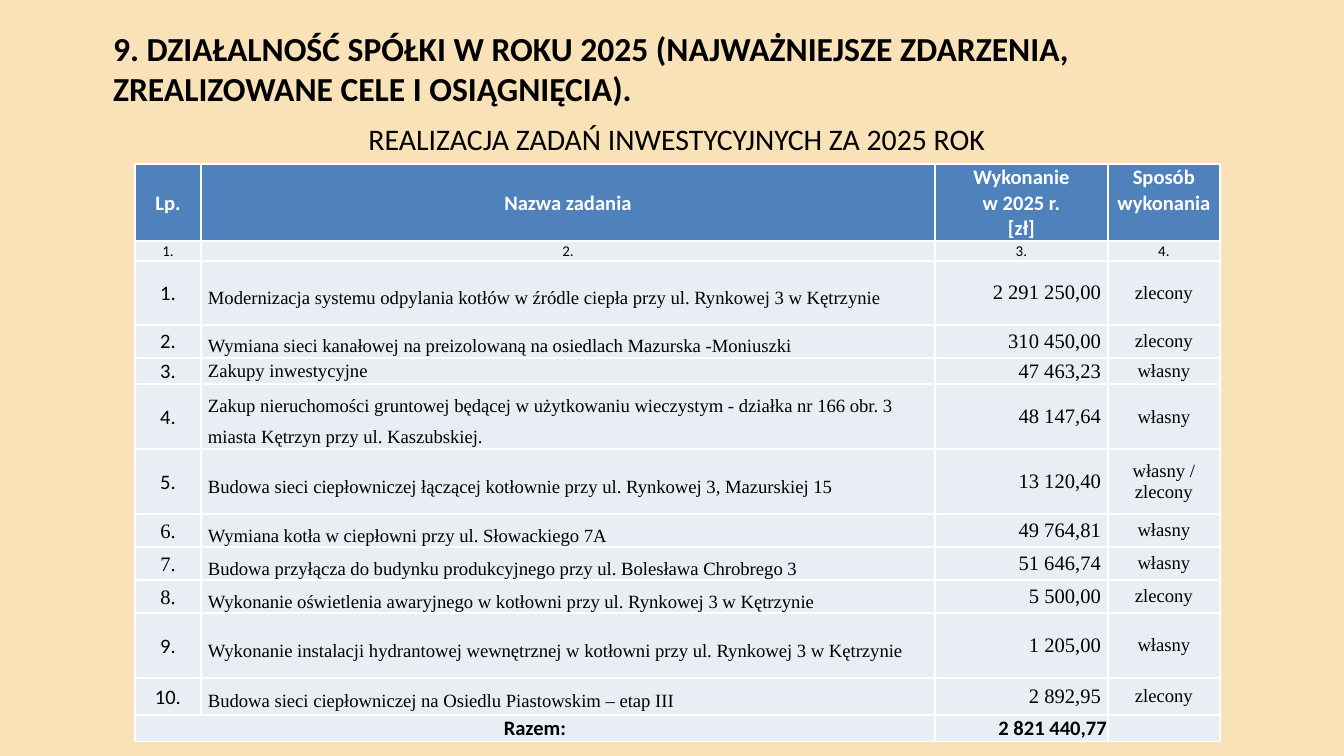
"""Build a slide with a table of investment tasks completed in 2025."""
from lxml import etree
from pptx import Presentation
from pptx import util as u
from pptx.dml.color import RGBColor
from pptx.enum import text
from pptx.oxml.ns import qn

PX = 9144000 / 1344
COLORS = {"background": "FAE2B8", "header": "4F81BD", "body": "E9EDF4",
          "border": "FFFFFF", "light": "FFFFFF", "dark": "000000"}
LEFT, CENTER, RIGHT = text.PP_ALIGN.LEFT, text.PP_ALIGN.CENTER, text.PP_ALIGN.RIGHT
SANS, SERIF = "Calibri", "Times New Roman"


def px(value):
    return u.Emu(round(value * PX))


def write(frame, words, align, size, font="Calibri", bold=False, color="dark", spacing=None):
    frame.text = words
    for paragraph in frame.paragraphs:
        paragraph.alignment = align
        if spacing:
            paragraph.line_spacing = spacing
        for run in paragraph.runs:
            for name, value in {"size": u.Pt(size), "name": font, "bold": bold}.items():
                setattr(run.font, name, value)
            run.font.color.rgb = RGBColor.from_string(COLORS[color])
        if not paragraph.runs:
            etree.SubElement(paragraph._p, qn("a:endParaRPr"), sz=str(size * 100))


presentation = Presentation()
presentation.slide_width, presentation.slide_height = px(1344), px(756)
slide = presentation.slides.add_slide(presentation.slide_layouts[5])
slide.background.fill.solid()
slide.background.fill.fore_color.rgb = RGBColor.from_string(COLORS["background"])

title = slide.shapes.title
for name, value in {"left": 101, "top": 22, "width": 1142, "height": 71}.items():
    setattr(title, name, px(value))
frame = title.text_frame
frame_format = {"margin_left": px(12), "margin_right": px(12), "margin_top": px(6),
                "margin_bottom": px(6), "vertical_anchor": text.MSO_ANCHOR.TOP,
                "auto_size": text.MSO_AUTO_SIZE.NONE, "word_wrap": True}
for name, value in frame_format.items():
    setattr(frame, name, value)
write(frame, "9. DZIAŁALNOŚĆ SPÓŁKI W ROKU 2025 (NAJWAŻNIEJSZE ZDARZENIA, "
      "ZREALIZOWANE CELE I OSIĄGNIĘCIA).", LEFT, 18, bold=True)

columns = [66, 734, 173, 112]
header = ["Lp.", "Nazwa zadania", "Wykonanie\nw 2025 r.\n[zł]", "Sposób\nwykonania"]
tasks = [
    (64, "Modernizacja systemu odpylania kotłów w źródle ciepła przy ul. Rynkowej 3 w Kętrzynie",
     "2 291 250,00", "zlecony"),
    (33, "Wymiana sieci kanałowej na preizolowaną na osiedlach Mazurska -Moniuszki",
     "310 450,00", "zlecony"),
    (26, "Zakupy inwestycyjne", "47 463,23", "własny"),
    (65, "Zakup nieruchomości gruntowej będącej w użytkowaniu wieczystym - działka nr 166 "
     "obr. 3 miasta Kętrzyn przy ul. Kaszubskiej.", "48 147,64", "własny"),
    (65, "Budowa sieci ciepłowniczej łączącej kotłownie przy ul. Rynkowej 3, Mazurskiej 15",
     "13 120,40", "własny / zlecony"),
    (33, "Wymiana kotła w ciepłowni przy ul. Słowackiego 7A", "49 764,81", "własny"),
    (33, "Budowa przyłącza do budynku produkcyjnego przy ul. Bolesława Chrobrego 3",
     "51 646,74", "własny"),
    (33, "Wykonanie oświetlenia awaryjnego w kotłowni przy ul. Rynkowej 3 w Kętrzynie",
     "5 500,00", "zlecony"),
    (65, "Wykonanie instalacji hydrantowej wewnętrznej w kotłowni przy ul. Rynkowej 3 w Kętrzynie",
     "1 205,00", "własny"),
    (37, "Budowa sieci ciepłowniczej na Osiedlu Piastowskim – etap III", "2 892,95", "zlecony"),
]
heights = [76, 20] + [task[0] for task in tasks] + [26]
total_row = len(heights) - 1
table = slide.shapes.add_table(len(heights), len(columns), px(135), px(164),
                               px(sum(columns)), px(sum(heights))).table
for column, width in zip(table.columns, columns):
    column.width = px(width)
for row, height in zip(table.rows, heights):
    row.height = px(height)

for row_index, row in enumerate(table.rows):
    for column_index, cell in enumerate(row.cells):
        is_task = 1 < row_index < total_row and column_index > 0
        side = px(7 if is_task else 1)
        cell_format = {"margin_left": side, "margin_right": side,
                       "margin_top": px(0 if is_task else 1), "margin_bottom": 0,
                       "vertical_anchor": text.MSO_ANCHOR.MIDDLE}
        for name, value in cell_format.items():
            setattr(cell, name, value)
        properties = cell._tc.get_or_add_tcPr()
        for edge in ("lnL", "lnR", "lnT", "lnB"):
            line = etree.SubElement(properties, qn(f"a:{edge}"), w="12700")
            fill = etree.SubElement(line, qn("a:solidFill"))
            etree.SubElement(fill, qn("a:srgbClr"), val=COLORS["border"])
        cell.fill.solid()
        cell.fill.fore_color.rgb = RGBColor.from_string(
            COLORS["body" if row_index else "header"])

for column_index, words in enumerate(header):
    write(table.cell(0, column_index).text_frame, words, CENTER, 11, bold=True, color="light")
    write(table.cell(1, column_index).text_frame, f"{column_index + 1}.", CENTER, 8)
table.cell(0, 3).vertical_anchor = text.MSO_ANCHOR.TOP

for number, (height, task, amount, method) in enumerate(tasks, 1):
    frames = [cell.text_frame for cell in table.rows[number + 1].cells]
    write(frames[0], f"{number}.", CENTER, 11, SERIF if number in (6, 7, 8) else SANS)
    write(frames[1], task, LEFT, 10, SERIF, spacing=None if number == 3 else 1.5)
    write(frames[2], amount, RIGHT, 11, SERIF)
    write(frames[3], method, CENTER, 10, SERIF)

totals = [("Razem:", CENTER), ("", CENTER), ("2 821 440,77", RIGHT), ("", CENTER)]
for column_index, (words, align) in enumerate(totals):
    write(table.cell(total_row, column_index).text_frame, words, align, 11, bold=True)
table.cell(total_row, 0).merge(table.cell(total_row, 1))

subtitle = slide.shapes.add_textbox(px(352), px(114), px(650), px(50))
write(subtitle.text_frame, "REALIZACJA ZADAŃ INWESTYCYJNYCH ZA 2025 ROK", CENTER, 16)

presentation.save("out.pptx")
